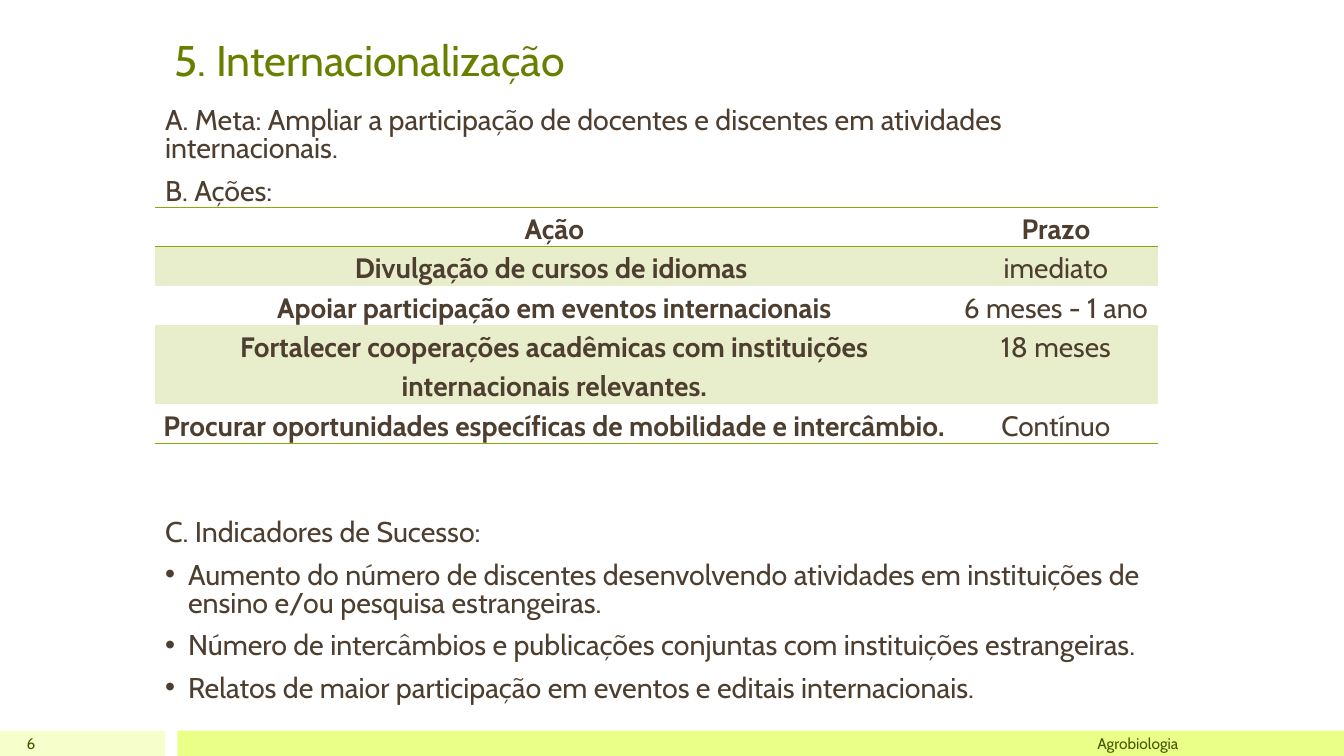
from lxml import etree
from pptx import Presentation
from pptx.dml.color import RGBColor
from pptx.enum.shapes import MSO_SHAPE
from pptx.enum.text import MSO_ANCHOR, PP_ALIGN
from pptx.oxml.ns import qn
from pptx.util import Cm, Pt

LEFT, CENTER, RIGHT = PP_ALIGN.LEFT, PP_ALIGN.CENTER, PP_ALIGN.RIGHT
TOP, MIDDLE, BOTTOM = MSO_ANCHOR.TOP, MSO_ANCHOR.MIDDLE, MSO_ANCHOR.BOTTOM

# Content
TITLE = " 5. Internacionalização"
INTRO = [
    "A. Meta: Ampliar a participação de docentes e discentes em atividades internacionais.",
    "B. Ações:",
]
ACTIONS = [
    ("Ação", "Prazo"),
    ("Divulgação de cursos de idiomas ", "imediato"),
    ("Apoiar participação em eventos internacionais", "6 meses - 1 ano"),
    ("Fortalecer cooperações acadêmicas com instituições internacionais relevantes.", "18 meses"),
    ("Procurar oportunidades específicas de mobilidade e intercâmbio.", "Contínuo"),
]
INDICATORS_HEADING = "C. Indicadores de Sucesso:"
INDICATORS = [
    "Aumento do número de discentes desenvolvendo atividades em instituições de "
    "ensino e/ou pesquisa estrangeiras.",
    "Número de intercâmbios e publicações conjuntas com instituições estrangeiras.",
    "Relatos de maior participação em eventos e editais internacionais.",
]
PAGE, FOOTER = "6", "Agrobiologia"

# Style and layout, in centimetres
FONT = "Cabin"
COLORS = {"title": "688000", "body": "4D3E2F", "footer": "455500",
          "bar_light": "F6FFCC", "bar": "E9FF88", "band": "E8EECC", "rule": "8BAA00"}
SLIDE_W, SLIDE_H = 33.87, 19.05
MARGIN, BODY_W = 3.91, 26.04
BAR_H = 0.64
BAR_TOP = SLIDE_H - BAR_H
COLUMNS = (20.12, 5.16)
LINE_H = 0.99
ROW_LINES = (1, 1, 1, 2, 1)
BULLET_INDENT = 0.58


def style_run(p, size, color, bold=False):
    for r in p.runs:
        r.font.name, r.font.size, r.font.bold = FONT, Pt(size), bold
        r.font.color.rgb = RGBColor.from_string(COLORS[color])


def add_text(s, box, lines, size, color, align=LEFT, anchor=TOP):
    tf = s.shapes.add_textbox(*map(Cm, box)).text_frame
    tf.word_wrap = True
    tf.vertical_anchor = anchor
    tf.text = "\n".join(lines)
    for p in tf.paragraphs:
        p.alignment = align
        style_run(p, size, color)
    return tf


def add_body(s, top, height, lines):
    tf = add_text(s, (MARGIN, top, BODY_W, height), lines, 20.4, "body")
    for p in tf.paragraphs:
        p.line_spacing, p.space_before = 0.8, Pt(11)
    return tf


def add_bullet(p):
    pPr = p._p.get_or_add_pPr()
    pPr.set("marL", str(Cm(BULLET_INDENT)))
    pPr.set("indent", str(-Cm(BULLET_INDENT)))
    etree.SubElement(pPr, qn("a:buFont"), typeface="Arial")
    etree.SubElement(pPr, qn("a:buChar"), char="•")


def add_borders(cell, sides):
    tcPr = cell._tc.get_or_add_tcPr()
    for i, side in enumerate(sides):
        ln = etree.Element(qn("a:ln" + side), w=str(Pt(1)))
        fill = etree.SubElement(ln, qn("a:solidFill"))
        etree.SubElement(fill, qn("a:srgbClr"), val=COLORS["rule"])
        tcPr.insert(i, ln)


def add_actions_table(s):
    frame = s.shapes.add_table(len(ACTIONS), len(COLUMNS), Cm(MARGIN), Cm(5.23),
                               Cm(sum(COLUMNS)), Cm(LINE_H * sum(ROW_LINES)))
    table = frame.table
    table.horz_banding = table.first_row = False
    # "No Style, No Grid"
    table._tbl.tblPr.find(qn("a:tableStyleId")).text = "{2D5ABB26-0587-4C30-8999-92F81FD0307C}"
    for column, width in zip(table.columns, COLUMNS):
        column.width = Cm(width)
    borders = {0: "TB", len(ACTIONS) - 1: "B"}
    for i, values in enumerate(ACTIONS):
        table.rows[i].height = Cm(LINE_H * ROW_LINES[i])
        for j, value in enumerate(values):
            cell = table.cell(i, j)
            cell.margin_left = cell.margin_right = Cm(0.18)
            cell.margin_top = cell.margin_bottom = 0
            cell.text_frame.text = value
            p = cell.text_frame.paragraphs[0]
            p.alignment, p.line_spacing, p.space_after = CENTER, 1.15, Pt(10)
            style_run(p, 20, "body", bold=i == 0 or j == 0)
            if i % 2:
                cell.fill.solid()
                cell.fill.fore_color.rgb = RGBColor.from_string(COLORS["band"])
            else:
                cell.fill.background()
            add_borders(cell, borders.get(i, ""))


def main():
    prs = Presentation()
    prs.slide_width, prs.slide_height = Cm(SLIDE_W), Cm(SLIDE_H)
    s = prs.slides.add_slide(prs.slide_layouts[6])

    # Footer bars
    for left, width, color in ((0, 4.17, "bar_light"), (4.47, SLIDE_W - 4.47, "bar")):
        sp = s.shapes.add_shape(MSO_SHAPE.RECTANGLE, Cm(left), Cm(BAR_TOP), Cm(width), Cm(BAR_H))
        sp.shadow.inherit = False
        sp.fill.solid()
        sp.fill.fore_color.rgb = RGBColor.from_string(COLORS[color])
        sp.line.fill.background()

    # Title and body text
    add_text(s, (MARGIN, 0.61, 11.13, 1.65), [TITLE], 30.6, "title", anchor=BOTTOM)
    add_body(s, 2.62, 2.6, INTRO)
    tf = add_body(s, 13, 4.8, [INDICATORS_HEADING] + INDICATORS)
    for p in tf.paragraphs[1:]:
        add_bullet(p)

    # Actions and deadlines
    add_actions_table(s)

    # Page number and footer
    for left, width, text in ((0, 1.14, PAGE), (4.55, 25.4, FOOTER)):
        add_text(s, (left, BAR_TOP, width, BAR_H), [text], 11, "footer", RIGHT, MIDDLE)

    prs.save("out.pptx")


if __name__ == "__main__":
    main()
